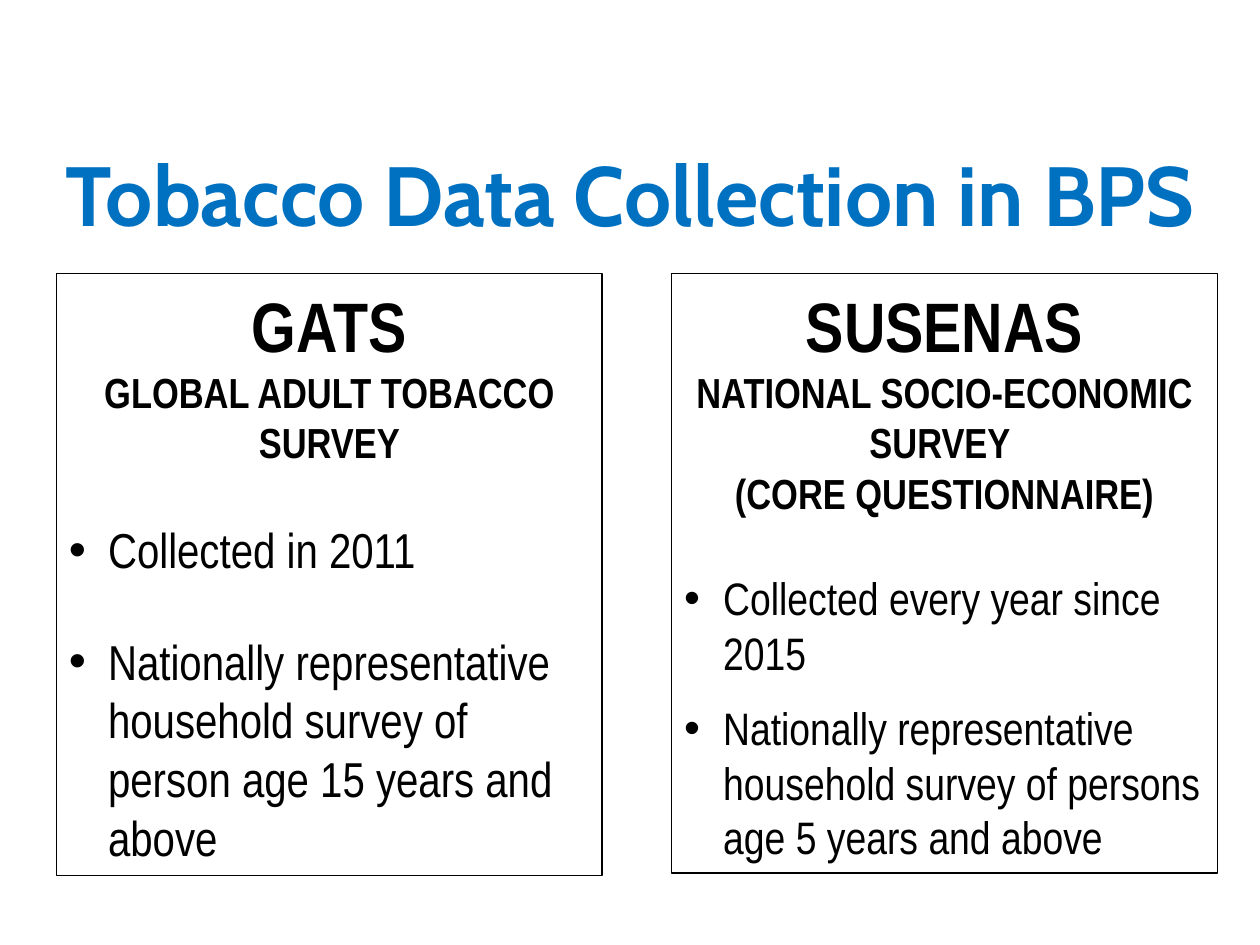
from dataclasses import dataclass

from lxml.etree import SubElement
from pptx import Presentation
from pptx.dml.color import RGBColor
from pptx.enum.shapes import MSO_SHAPE
from pptx.enum.text import MSO_ANCHOR, MSO_AUTO_SIZE, PP_ALIGN
from pptx.oxml.ns import qn
from pptx.util import Cm, Pt

BLACK = "000000"
TITLE_BLUE = "0070C0"
PANEL_TOP = 5.51
PANEL_WIDTH = 11
BULLET_INDENT = 0.79
FRAME_FORMAT = {
    "word_wrap": True,
    "auto_size": MSO_AUTO_SIZE.NONE,
    "vertical_anchor": MSO_ANCHOR.MIDDLE,
}


@dataclass(frozen=True)
class Survey:
    acronym: str
    full_name: tuple[str, ...]
    facts: tuple[str, ...]
    left: float
    height: float
    fact_size: int
    fact_gap: int


SURVEYS = (
    Survey(
        "GATS",
        ("GLOBAL ADULT TOBACCO SURVEY",),
        (
            "Collected in 2011",
            "Nationally representative household survey of person age 15 years and above",
        ),
        left=1.14, height=12.14, fact_size=28, fact_gap=30,
    ),
    Survey(
        "SUSENAS",
        ("NATIONAL SOCIO-ECONOMIC SURVEY ", "(CORE QUESTIONNAIRE)"),
        (
            "Collected every year since 2015",
            "Nationally representative household survey of persons age 5 years and above",
        ),
        left=13.54, height=12.09, fact_size=26, fact_gap=12,
    ),
)


def color(value: str) -> RGBColor:
    return RGBColor.from_string(value)


def apply_format(target, values: dict) -> None:
    for attribute, value in values.items():
        setattr(target, attribute, value)


def place(shape, left: float, top: float, width: float, height: float) -> None:
    apply_format(shape, {
        "left": Cm(left), "top": Cm(top), "width": Cm(width), "height": Cm(height),
    })


def add_bullet(paragraph) -> None:
    properties = paragraph._p.get_or_add_pPr()
    properties.set("marL", str(Cm(BULLET_INDENT)))
    properties.set("indent", str(-Cm(BULLET_INDENT)))
    SubElement(properties, qn("a:buFont")).set("typeface", "Arial")
    SubElement(properties, qn("a:buChar")).set("char", "•")


def write_line(paragraph, text: str, size: int, bold: bool = True,
               align: PP_ALIGN = PP_ALIGN.CENTER, gap: int = 0,
               face: str = "Arial Narrow", ink: str = BLACK) -> None:
    line = paragraph.add_run()
    line.text = text
    apply_format(paragraph, {
        "alignment": align, "space_before": Pt(0), "space_after": Pt(gap),
    })
    apply_format(line.font, {"name": face, "size": Pt(size), "bold": bold})
    line.font.color.rgb = color(ink)


def draw_survey(slide, survey: Survey) -> None:
    panel = slide.shapes.add_shape(
        MSO_SHAPE.RECTANGLE, Cm(survey.left), Cm(PANEL_TOP),
        Cm(PANEL_WIDTH), Cm(survey.height),
    )
    panel.shadow.inherit = False
    panel.fill.background()
    panel.line.color.rgb = color(BLACK)
    panel.line.width = Pt(0.75)
    frame = panel.text_frame
    apply_format(frame, FRAME_FORMAT)

    write_line(frame.paragraphs[0], survey.acronym, 40)
    for name_line in survey.full_name:
        gap = 30 if name_line == survey.full_name[-1] else 0
        write_line(frame.add_paragraph(), name_line, 24, gap=gap)
    for fact in survey.facts:
        paragraph = frame.add_paragraph()
        add_bullet(paragraph)
        gap = 0 if fact == survey.facts[-1] else survey.fact_gap
        write_line(paragraph, fact, survey.fact_size, bold=False,
                   align=PP_ALIGN.LEFT, gap=gap)


def main() -> None:
    deck = Presentation()
    apply_format(deck, {"slide_width": Cm(25.4), "slide_height": Cm(19.05)})
    slide = deck.slides.add_slide(deck.slide_layouts[5])

    heading = slide.shapes.title
    place(heading, 0.5, 2.74, 24.4, 2.31)
    apply_format(heading.text_frame, FRAME_FORMAT)
    write_line(heading.text_frame.paragraphs[0], "Tobacco Data Collection in BPS",
               48, face="Cabin", ink=TITLE_BLUE)

    for survey in SURVEYS:
        draw_survey(slide, survey)
    deck.save("out.pptx")


if __name__ == "__main__":
    main()
